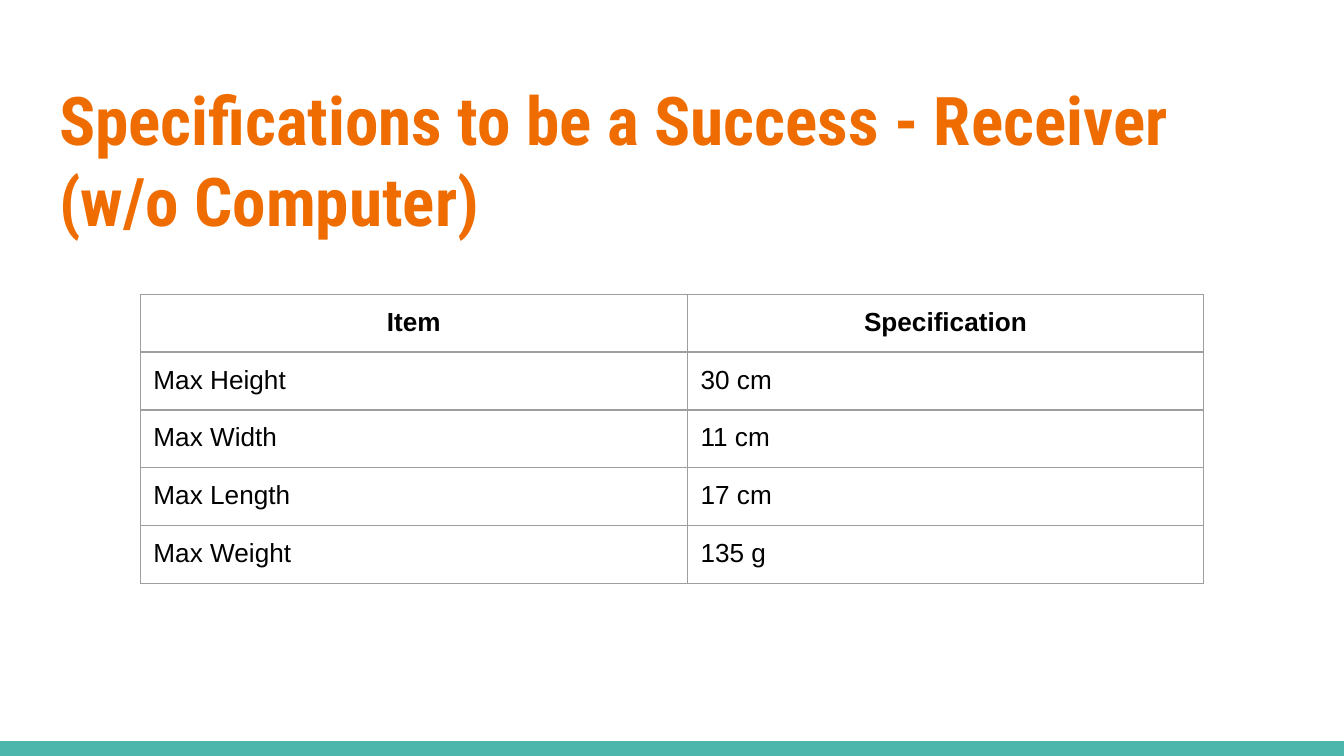
import pptx
import pptx.util
import pptx.dml.color
import pptx.enum.shapes
import pptx.enum.text
import pptx.oxml
import pptx.oxml.ns
from pptx.util import Cm

TITLE = "Specifications to be a Success - Receiver (w/o Computer)"
SPECIFICATIONS = [
    ("Item", "Specification"),
    ("Max Height", "30 cm"),
    ("Max Width", "11 cm"),
    ("Max Length", "17 cm"),
    ("Max Weight", "135 g"),
]

COLORS = {"title": "EF6C00", "bar": "4DB6AC", "text": "000000",
          "border": "9E9E9E", "background": "FFFFFF"}
SLIDE_WIDTH, SLIDE_HEIGHT = Cm(25.4), Cm(14.29)
BAR_HEIGHT = Cm(0.28)
TITLE_BOX = (Cm(0.87), Cm(1.24), Cm(23.67), Cm(1.95))
TABLE_LEFT, TABLE_TOP = Cm(2.65), Cm(5.56)
COLUMN_WIDTHS = [Cm(10.34), Cm(9.76)]
ROW_HEIGHT = Cm(1.06)
INSET = Cm(0.25)
BORDER_WIDTH = pptx.util.Pt(0.75)

TITLE_FONT = {"name": "Roboto Condensed", "size": pptx.util.Pt(36), "bold": True}
TABLE_FONT = {"name": "Arial", "size": pptx.util.Pt(14)}
MARGINS = {"margin_" + side: INSET for side in ("left", "top", "right", "bottom")}


def color(name):
    return pptx.dml.color.RGBColor.from_string(COLORS[name])


def set_attributes(target, values):
    for name, value in values.items():
        setattr(target, name, value)


def write(text_frame, text, font, color_name, alignment):
    paragraph = text_frame.paragraphs[0]
    paragraph.alignment = alignment
    run = paragraph.add_run()
    run.text = text
    set_attributes(run.font, font)
    run.font.color.rgb = color(color_name)


def add_borders(cell):
    properties = cell._tc.get_or_add_tcPr()
    for index, edge in enumerate(("lnL", "lnR", "lnT", "lnB")):
        border = pptx.oxml.parse_xml(
            f'<a:{edge} {pptx.oxml.ns.nsdecls("a")} w="{BORDER_WIDTH}">'
            f'<a:solidFill><a:srgbClr val="{COLORS["border"]}"/></a:solidFill>'
            f'<a:prstDash val="solid"/></a:{edge}>')
        properties.insert(index, border)


def add_bar(slide):
    bar = slide.shapes.add_shape(
        pptx.enum.shapes.MSO_SHAPE.RECTANGLE,
        0, SLIDE_HEIGHT - BAR_HEIGHT, SLIDE_WIDTH, BAR_HEIGHT)
    bar.shadow.inherit = False
    bar.fill.solid()
    bar.fill.fore_color.rgb = color("bar")
    bar.line.fill.background()


def add_title(slide):
    text_frame = slide.shapes.add_textbox(*TITLE_BOX).text_frame
    set_attributes(text_frame, {
        **MARGINS, "word_wrap": True,
        "vertical_anchor": pptx.enum.text.MSO_ANCHOR.TOP})
    write(text_frame, TITLE, TITLE_FONT, "title", pptx.enum.text.PP_ALIGN.LEFT)


def add_specification_table(slide):
    row_count = len(SPECIFICATIONS)
    table = slide.shapes.add_table(
        row_count, len(COLUMN_WIDTHS), TABLE_LEFT, TABLE_TOP,
        sum(COLUMN_WIDTHS), ROW_HEIGHT * row_count).table
    set_attributes(table, {"first_row": False, "horz_banding": False})
    for column, width in zip(table.columns, COLUMN_WIDTHS):
        column.width = width
    for row_index, texts in enumerate(SPECIFICATIONS):
        table.rows[row_index].height = ROW_HEIGHT
        is_header = row_index == 0
        alignment = (pptx.enum.text.PP_ALIGN.CENTER if is_header
                     else pptx.enum.text.PP_ALIGN.LEFT)
        for column_index, text in enumerate(texts):
            cell = table.cell(row_index, column_index)
            set_attributes(cell, MARGINS)
            cell.fill.background()
            add_borders(cell)
            write(cell.text_frame, text, {**TABLE_FONT, "bold": is_header},
                  "text", alignment)


def main():
    presentation = pptx.Presentation()
    set_attributes(presentation, {"slide_width": SLIDE_WIDTH,
                                  "slide_height": SLIDE_HEIGHT})
    slide = presentation.slides.add_slide(presentation.slide_layouts[6])
    slide.background.fill.solid()
    slide.background.fill.fore_color.rgb = color("background")
    add_bar(slide)
    add_title(slide)
    add_specification_table(slide)
    presentation.save("out.pptx")


if __name__ == "__main__":
    main()
